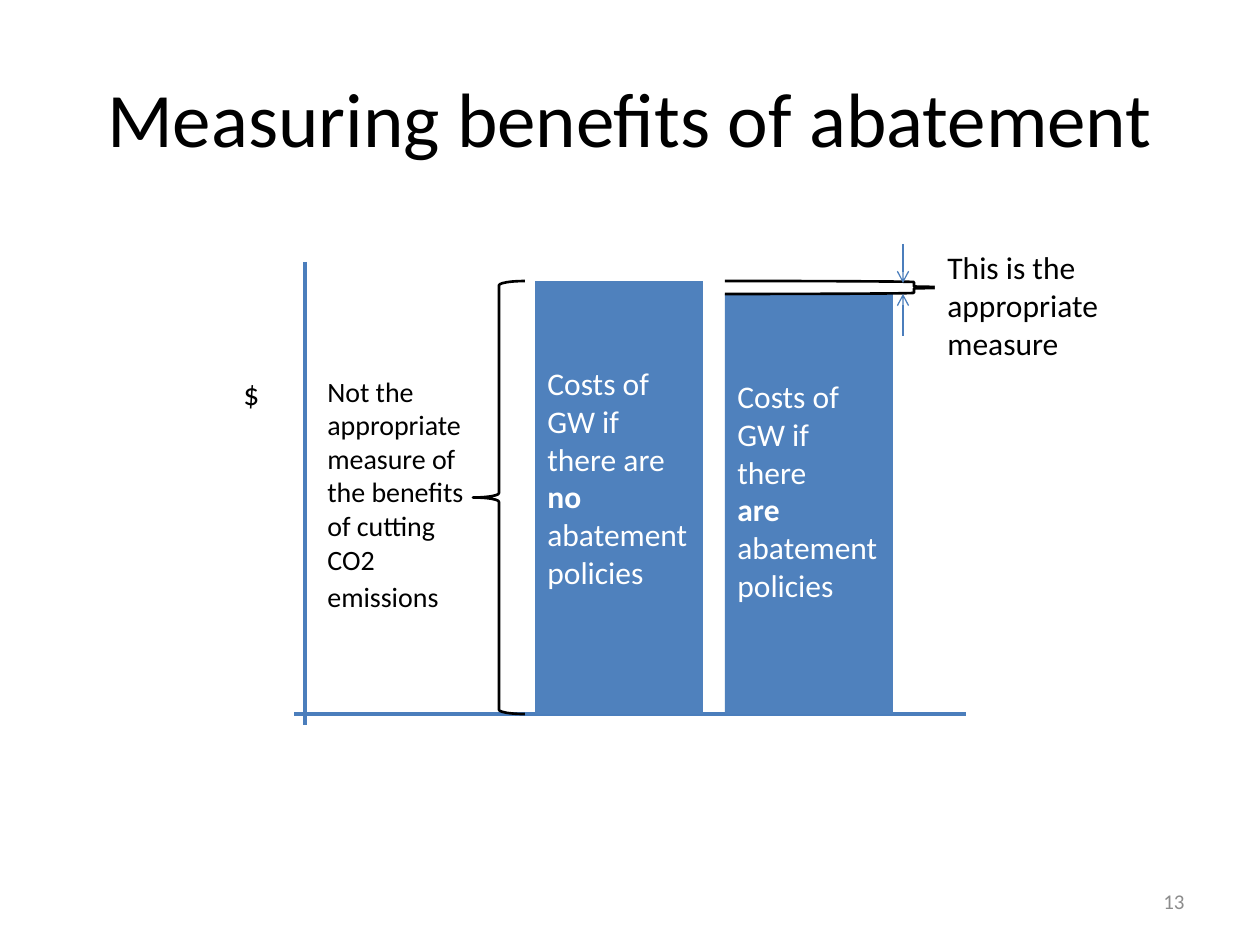
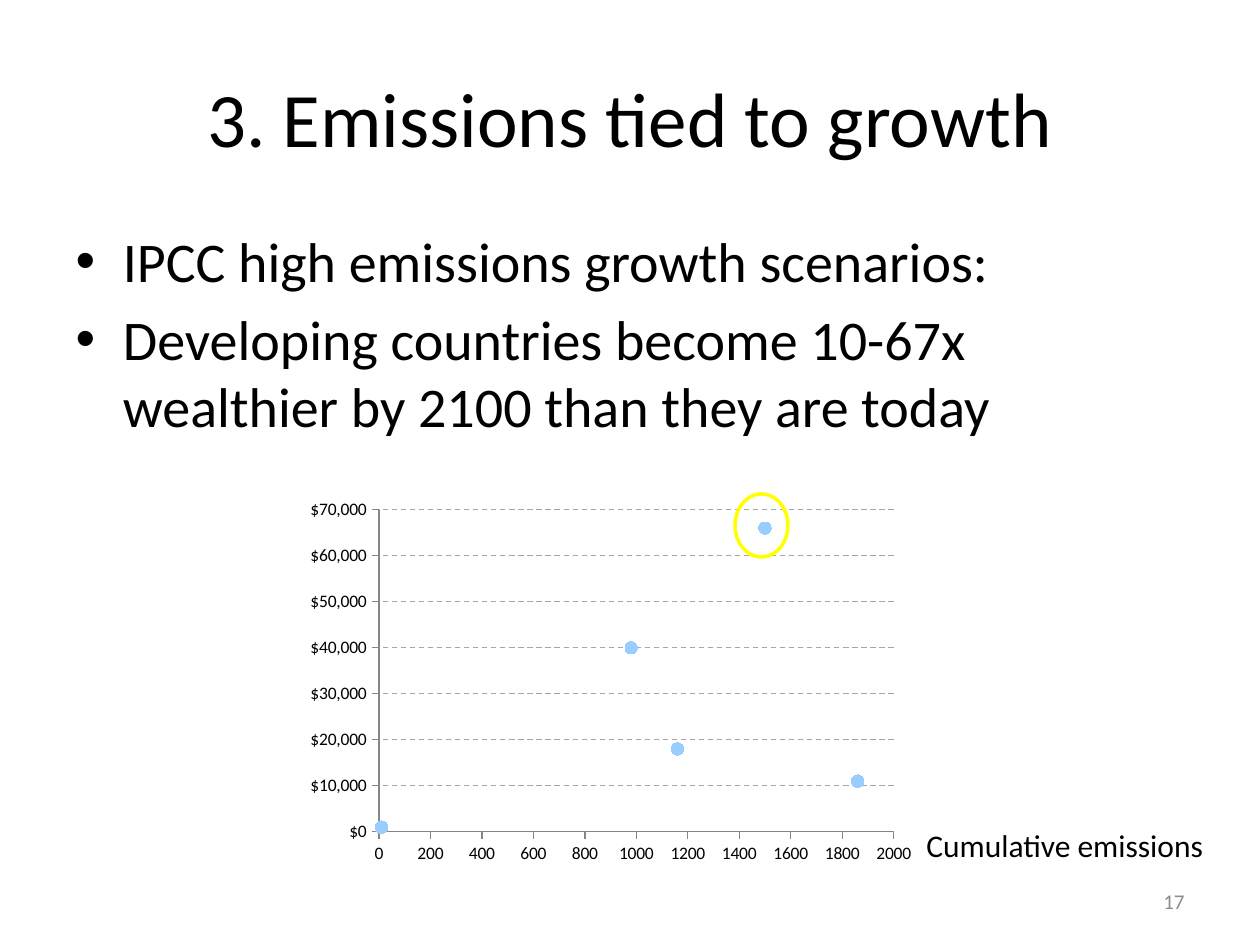
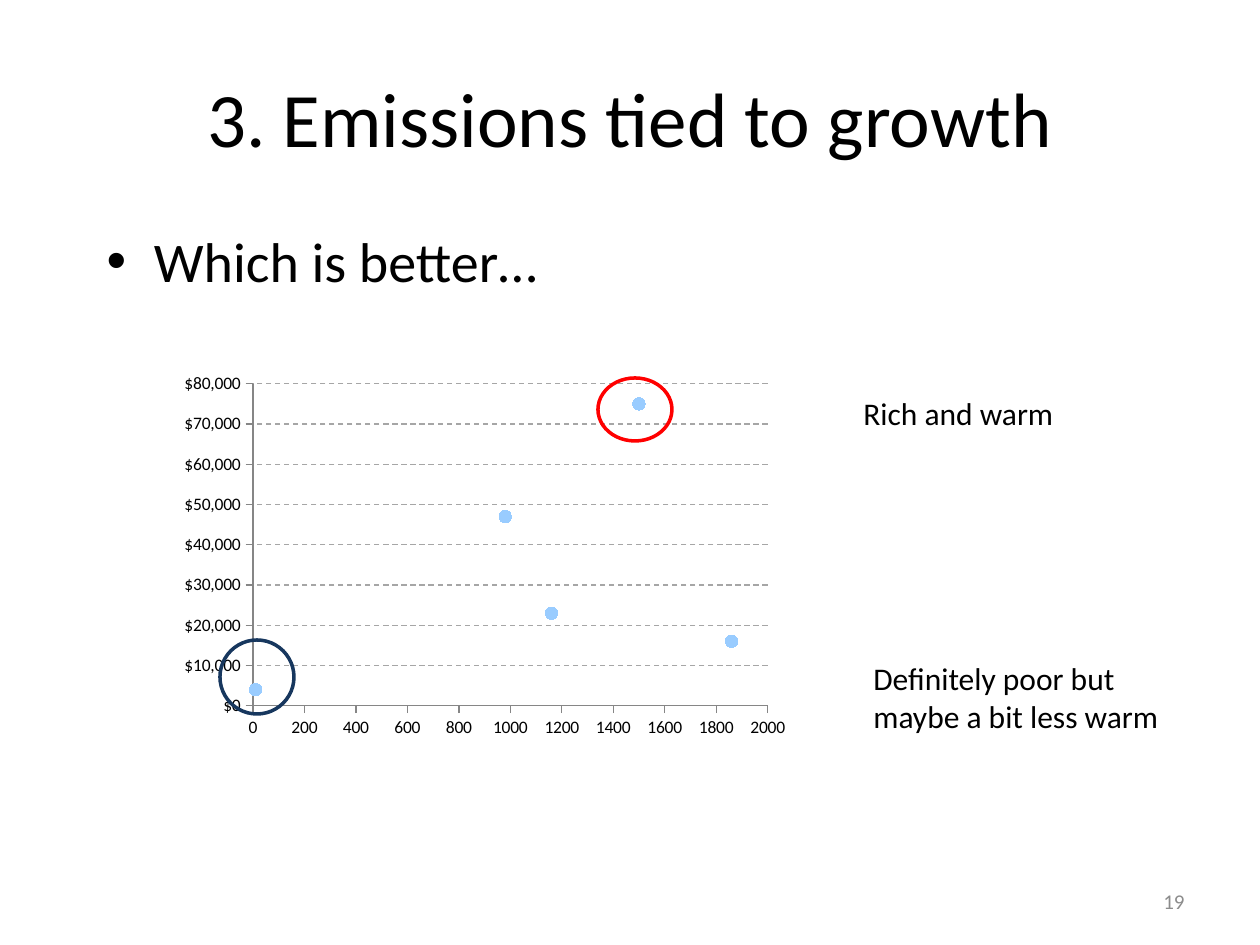
from dataclasses import dataclass
from lxml.etree import SubElement
from pptx import Presentation
from pptx.chart.data import XyChartData
from pptx.dml.color import RGBColor
from pptx.enum.chart import XL_CHART_TYPE as ChartType, XL_MARKER_STYLE as MarkerStyle, XL_TICK_MARK as TickMark
from pptx.enum.dml import MSO_LINE_DASH_STYLE as Dash
from pptx.enum.shapes import MSO_CONNECTOR as ConnectorType, MSO_SHAPE as ShapeType
from pptx.enum.text import MSO_ANCHOR as Anchor, PP_ALIGN as Align
from pptx.oxml import parse_xml
from pptx.oxml.ns import nsdecls, qn
from pptx.util import Emu, Pt

EMU_PER_PX = 914400 / 126


def px(length):
    return Emu(round(length * EMU_PER_PX))


def rgb(value):
    return RGBColor.from_string(value)


@dataclass(frozen=True)
class Theme:
    font: str = "Calibri"
    ink: RGBColor = rgb("000000")
    paper: RGBColor = rgb("FFFFFF")
    bar: RGBColor = rgb("4F81BD")
    rule: RGBColor = rgb("4B7EBC")
    muted: RGBColor = rgb("8C8C8C")
    axis: RGBColor = rgb("868686")
    grid: RGBColor = rgb("A6A6A6")
    marker: RGBColor = rgb("99CCFF")
    yellow: RGBColor = rgb("FFFF00")
    red: RGBColor = rgb("FF0000")
    navy: RGBColor = rgb("17375E")
    title_size: Pt = Pt(44)
    body_size: Pt = Pt(32)
    label_size: Pt = Pt(18)
    note_size: Pt = Pt(16)
    number_size: Pt = Pt(12)
    chart_size: Pt = Pt(10)


THEME = Theme()


@dataclass(frozen=True)
class Box:
    left: int
    top: int
    width: int
    height: int

    def inner(self, left, top, width, height):
        return Box(self.left + left, self.top + top, width, height)

    def emu(self):
        return [px(length) for length in (self.left, self.top, self.width, self.height)]


TITLE_BOX = Box(63, 38, 1134, 157)
NUMBER_BOX = Box(903, 876, 294, 50)


def apply(target, formats):
    for name, value in formats.items():
        setattr(target, name, value)


def set_font(font, size, color, bold=False):
    apply(font, {"name": THEME.font, "size": size, "bold": bold})
    font.color.rgb = color


def write(shape, paragraphs, size=THEME.label_size, color=THEME.ink, align=Align.LEFT, **frame_formats):
    frame = shape.text_frame
    apply(frame, {"word_wrap": True, **frame_formats})
    for index, runs in enumerate(paragraphs):
        paragraph = frame.add_paragraph() if index else frame.paragraphs[0]
        paragraph.alignment = align
        for text, changes in runs:
            run = paragraph.add_run()
            run.text = text
            set_font(run.font, **{"size": size, "color": color, **changes})


def plain(*texts):
    return [[(text, {})] for text in texts]


def add_label(slide, box, paragraphs, **formats):
    write(slide.shapes.add_textbox(*box.emu()), paragraphs, **formats)


def add_preset(slide, kind, box, fill=None, line=None, width=2):
    shape = slide.shapes.add_shape(kind, *box.emu())
    shape.shadow.inherit = False
    if fill is None:
        shape.fill.background()
    else:
        shape.fill.solid()
        shape.fill.fore_color.rgb = fill
    if line is None:
        shape.line.fill.background()
    else:
        shape.line.color.rgb = line
        shape.line.width = Pt(width)
    return shape


def add_panel(slide, box, fill, paragraphs, color, **frame_formats):
    shape = add_preset(slide, ShapeType.RECTANGLE, box, fill=fill)
    write(shape, paragraphs, color=color, vertical_anchor=Anchor.TOP, **frame_formats)


def add_rule(slide, start, end, width, arrow=False):
    connector = slide.shapes.add_connector(ConnectorType.STRAIGHT, *map(px, (*start, *end)))
    connector.line.color.rgb = THEME.rule
    connector.line.width = Pt(width)
    properties = connector._element.spPr
    if arrow:
        SubElement(properties.find(qn("a:ln")), qn("a:tailEnd"), type="arrow")
    SubElement(properties, qn("a:effectLst"))


def fill_placeholder(placeholder, box, texts, size, **formats):
    apply(placeholder, dict(zip(("left", "top", "width", "height"), box.emu())))
    write(placeholder, plain(*texts), size=size, **formats)


def add_slide(presentation, layout, title, number):
    slide = presentation.slides.add_slide(presentation.slide_layouts[layout])
    fill_placeholder(slide.shapes.title, TITLE_BOX, [title], THEME.title_size,
                     align=Align.CENTER, vertical_anchor=Anchor.MIDDLE)
    add_label(slide, NUMBER_BOX, plain(str(number)), size=THEME.number_size, color=THEME.muted,
              align=Align.RIGHT, vertical_anchor=Anchor.MIDDLE)
    return slide


def add_cost_diagram(slide, box):
    def point(left, top):
        return box.left + left, box.top + top

    base, bar_width, bar_pitch, full_top, saving = 474, 168, 190, 41, 13
    first_bar = 305
    second_bar = first_bar + bar_pitch
    full_height = base - full_top
    bold = {"bold": True}
    bars = [
        (first_bar, full_top,
         [[("Costs of GW if there are ", {}), ("no", bold), (" abatement policies", {})]]),
        (second_bar, full_top + saving,
         [[("Costs of GW if there", {})], [("are", bold), (" abatement policies", {})]]),
    ]
    add_rule(slide, point(75, 22), point(75, 485), 2)
    add_rule(slide, point(736, base), point(64, base), 2)
    for left, top, paragraphs in bars:
        add_panel(slide, box.inner(left, top, bar_width, base - top), THEME.bar, paragraphs,
                  THEME.paper, margin_top=px(83))

    add_label(slide, box.inner(1, 128, 53, 50), plain("$"))
    add_preset(slide, ShapeType.LEFT_BRACE, box.inner(243, full_top, 52, full_height),
               line=THEME.ink, width=1.5)
    add_label(slide, box.inner(85, 128, 168, 254), [
        [("Not the", {})],
        [("appropriate measure of the benefits of cutting CO2 emissions", {}),
         (" ", {"size": THEME.label_size})],
    ], size=THEME.note_size)

    add_preset(slide, ShapeType.RIGHT_BRACE, box.inner(second_bar, full_top, 378, saving),
               line=THEME.ink, width=1.5)
    for start, end in ((4, full_top + 2), (96, full_top + saving)):
        add_rule(slide, point(673, start), point(673, end), 0.75, arrow=True)
    add_panel(slide, box.inner(705, 2, 210, 127), THEME.paper,
              plain("This is the appropriate measure"), THEME.ink)


def set_plot_layout(chart, **fractions):
    plot_area = chart._chartSpace.chart.plotArea
    for layout in plot_area.findall(qn("c:layout")):
        plot_area.remove(layout)
    sizes = "".join(f'<c:{name} val="{value}"/>' for name, value in fractions.items())
    plot_area.insert(0, parse_xml(
        f'<c:layout {nsdecls("c")}><c:manualLayout><c:layoutTarget val="inner"/>'
        f'<c:xMode val="edge"/><c:yMode val="edge"/>{sizes}</c:manualLayout></c:layout>'))


def add_income_chart(slide, box, incomes, maximum):
    data = XyChartData()
    points = data.add_series("Series 1")
    for emissions, income in zip((10, 1500, 1860, 980, 1160), incomes):
        points.add_data_point(emissions, income)
    chart = slide.shapes.add_chart(ChartType.XY_SCATTER, *box.emu(), data).chart
    apply(chart, {"has_legend": False, "has_title": False})
    set_font(chart.font, THEME.chart_size, THEME.ink)
    plot_left, plot_top, plot_width, plot_height = 85, 16, 515, 322
    set_plot_layout(chart, x=round(plot_left / box.width, 3), y=round(plot_top / box.height, 3),
                    w=round(plot_width / box.width, 3), h=round(plot_height / box.height, 3))
    chart.plots[0].vary_by_categories = False

    series = chart.plots[0].series[0]
    series.smooth = False
    series.format.line.fill.background()
    apply(series.marker, {"style": MarkerStyle.CIRCLE, "size": 7})
    series.marker.format.fill.solid()
    series.marker.format.fill.fore_color.rgb = THEME.marker
    series.marker.format.line.fill.background()

    for axis, limit, step, number_format in (
        (chart.category_axis, 2000, 200, "General"),
        (chart.value_axis, maximum, 10000, '"$"#,##0'),
    ):
        apply(axis, {"minimum_scale": 0, "maximum_scale": limit, "major_unit": step,
                     "major_tick_mark": TickMark.OUTSIDE, "minor_tick_mark": TickMark.NONE,
                     "has_major_gridlines": number_format != "General", "has_title": False})
        apply(axis.tick_labels, {"number_format": number_format, "number_format_is_linked": False})
        axis.format.line.color.rgb = THEME.axis
        axis.format.line.width = Pt(0.75)
    grid = chart.value_axis.major_gridlines.format.line
    grid.color.rgb = THEME.grid
    apply(grid, {"width": Pt(0.75), "dash_style": Dash.DASH})


def add_growth_slide(presentation, number, body_box, bullets, chart_box, incomes, maximum, rings, labels):
    slide = add_slide(presentation, 1, "3. Emissions tied to growth", number)
    fill_placeholder(slide.placeholders[1], body_box, bullets, THEME.body_size)
    add_income_chart(slide, chart_box, incomes, maximum)
    for place, color in rings:
        add_preset(slide, ShapeType.OVAL, chart_box.inner(*place), line=color)
    for place, text, wrap in labels:
        add_label(slide, chart_box.inner(*place), plain(text), word_wrap=wrap)


def main():
    presentation = Presentation()
    apply(presentation, {"slide_width": px(1260), "slide_height": px(945)})

    slide = add_slide(presentation, 5, "Measuring benefits of abatement", 13)
    add_cost_diagram(slide, Box(230, 240, 920, 490))

    add_growth_slide(
        presentation, 17, Box(63, 220, 1134, 624),
        ["IPCC high emissions growth scenarios:",
         "Developing countries become 10-67x wealthier by 2100 than they are today"],
        Box(294, 494, 630, 378), (1000, 66000, 11000, 40000, 18000), 70000,
        rings=[((441, 0, 53, 63), THEME.yellow)],
        labels=[((620, 326, 305, 50), "Cumulative emissions", False)])

    add_growth_slide(
        presentation, 19, Box(94, 220, 1103, 624), ["Which is better…"],
        Box(168, 368, 630, 378), (4000, 75000, 16000, 47000, 23000), 80000,
        rings=[((430, 10, 74, 63), THEME.red), ((52, 272, 74, 74), THEME.navy)],
        labels=[((683, 20, 252, 50), "Rich and warm", True),
                ((693, 285, 326, 90), "Definitely poor but maybe a bit less warm", True)])

    presentation.save("out.pptx")


if __name__ == "__main__":
    main()
